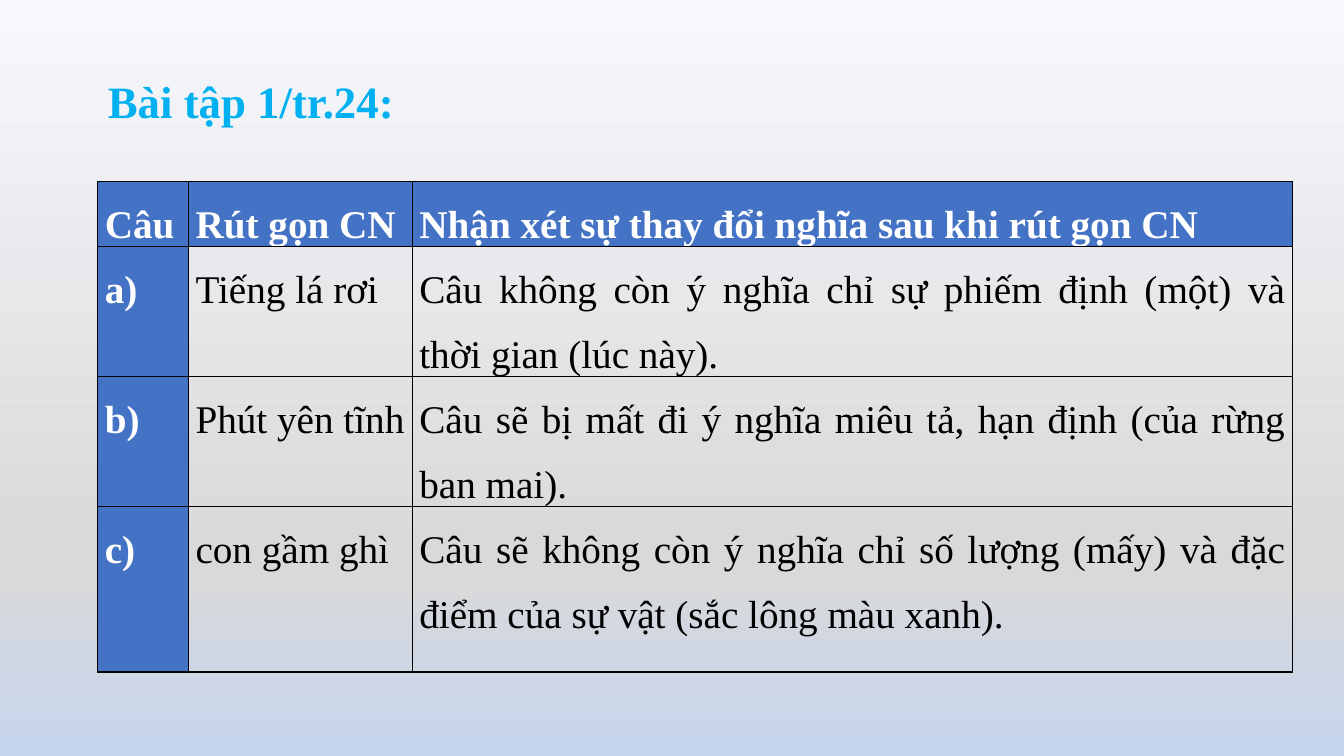
from copy import deepcopy

from lxml.etree import SubElement
from pptx import Presentation
from pptx.dml.color import RGBColor
from pptx.enum.text import MSO_ANCHOR as Anchor, MSO_AUTO_SIZE as AutoSize, PP_ALIGN as Align
from pptx.oxml.ns import qn
from pptx.util import Inches, Pt

COLORS = {
    "title": "00B0F0",
    "header": "4472C4",
    "header_text": "FFFFFF",
    "body_text": "000000",
    "border": "000000",
}
BACKGROUND_STOPS = [(0, "F6F8FC"), (0.74, "D9D9D9"), (1, "C7D5ED")]
PARAGRAPH_FORMAT = {"alignment": Align.JUSTIFY, "line_spacing": 1.5}
TITLE_FRAME = {"word_wrap": True, "auto_size": AutoSize.NONE, "vertical_anchor": Anchor.TOP}
CELL_FORMAT = {
    "margin_left": Inches(0.07),
    "margin_right": Inches(0.07),
    "margin_top": 0,
    "margin_bottom": 0,
    "vertical_anchor": Anchor.TOP,
}
COLUMN_WIDTHS = [0.9, 2.22, 8.73]
ROW_HEIGHTS = [0.57, 1.13, 1.13, 1.64]
ROWS = [
    ("Câu", "Rút gọn CN", "Nhận xét sự thay đổi nghĩa sau khi rút gọn CN"),
    ("a)", "Tiếng lá rơi",
     "Câu không còn ý nghĩa chỉ sự phiếm định (một) và thời gian (lúc này)."),
    ("b)", "Phút yên tĩnh",
     "Câu sẽ bị mất đi ý nghĩa miêu tả, hạn định (của rừng ban mai)."),
    ("c)", "con gầm ghì",
     "Câu sẽ không còn ý nghĩa chỉ số lượng (mấy) và đặc điểm của sự vật "
     "(sắc lông màu xanh)."),
]


def apply_format(target, values):
    for name, value in values.items():
        setattr(target, name, value)


def write_text(text_frame, text, size, color, bold):
    paragraph = text_frame.paragraphs[0]
    apply_format(paragraph, PARAGRAPH_FORMAT)
    run = paragraph.add_run()
    run.text = text
    apply_format(run.font, {"name": "Times New Roman", "size": Pt(size), "bold": bold})
    run.font.color.rgb = RGBColor.from_string(COLORS[color])


def paint_background(slide):
    fill = slide.background.fill
    fill.gradient()
    fill.gradient_angle = 270
    last_stop = list(slide.element.iter(qn("a:gs")))[-1]
    last_stop.addnext(deepcopy(last_stop))
    for stop, (position, color) in zip(fill.gradient_stops, BACKGROUND_STOPS):
        stop.position = position
        stop.color.rgb = RGBColor.from_string(color)


def add_title(slide, left, top, width, height):
    title = slide.shapes.title
    apply_format(title, {"left": left, "top": top, "width": width, "height": height})
    apply_format(title.text_frame, TITLE_FRAME)
    write_text(title.text_frame, "Bài tập 1/tr.24:", 32, "title", True)


def add_borders(cell):
    properties = cell._tc.get_or_add_tcPr()
    for index, side in enumerate(("a:lnL", "a:lnR", "a:lnT", "a:lnB")):
        line = properties.makeelement(qn(side), {"w": str(Pt(1))})
        fill = SubElement(line, qn("a:solidFill"))
        SubElement(fill, qn("a:srgbClr"), val=COLORS["border"])
        properties.insert(index, line)


def format_cell(cell, text, is_header):
    apply_format(cell, CELL_FORMAT)
    if is_header:
        cell.fill.solid()
        cell.fill.fore_color.rgb = RGBColor.from_string(COLORS["header"])
    else:
        cell.fill.background()
    add_borders(cell)
    write_text(cell.text_frame, text, 28, "header_text" if is_header else "body_text", is_header)


def add_answer_table(slide, left, top, width, height):
    frame = slide.shapes.add_table(len(ROWS), len(COLUMN_WIDTHS), left, top, width, height)
    table = frame.table
    for column, column_width in zip(table.columns, COLUMN_WIDTHS):
        column.width = Inches(column_width)
    for row_index, (row, row_height) in enumerate(zip(table.rows, ROW_HEIGHTS)):
        row.height = Inches(row_height)
        for column_index, text in enumerate(ROWS[row_index]):
            is_header = row_index == 0 or column_index == 0
            format_cell(row.cells[column_index], text, is_header)


def main():
    presentation = Presentation()
    presentation.slide_width = Inches(13.33)
    presentation.slide_height = Inches(7.5)
    slide = presentation.slides.add_slide(presentation.slide_layouts.get_by_name("Title Only"))
    paint_background(slide)
    add_title(slide, Inches(0.97), Inches(0.41), Inches(3.11), Inches(0.81))
    add_answer_table(slide, Inches(0.97), Inches(1.8),
                     Inches(sum(COLUMN_WIDTHS)), Inches(sum(ROW_HEIGHTS)))
    presentation.save("out.pptx")


if __name__ == "__main__":
    main()
